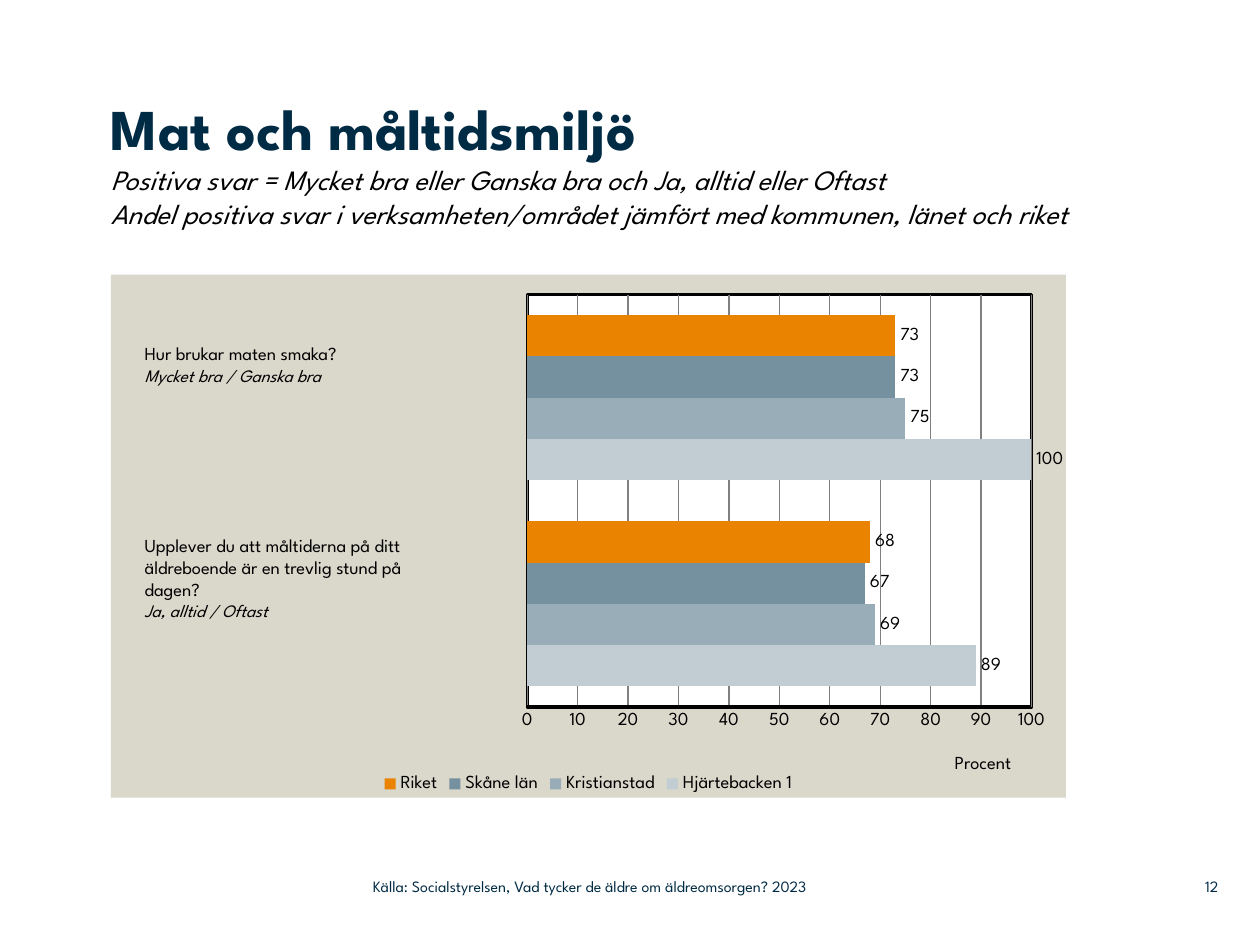
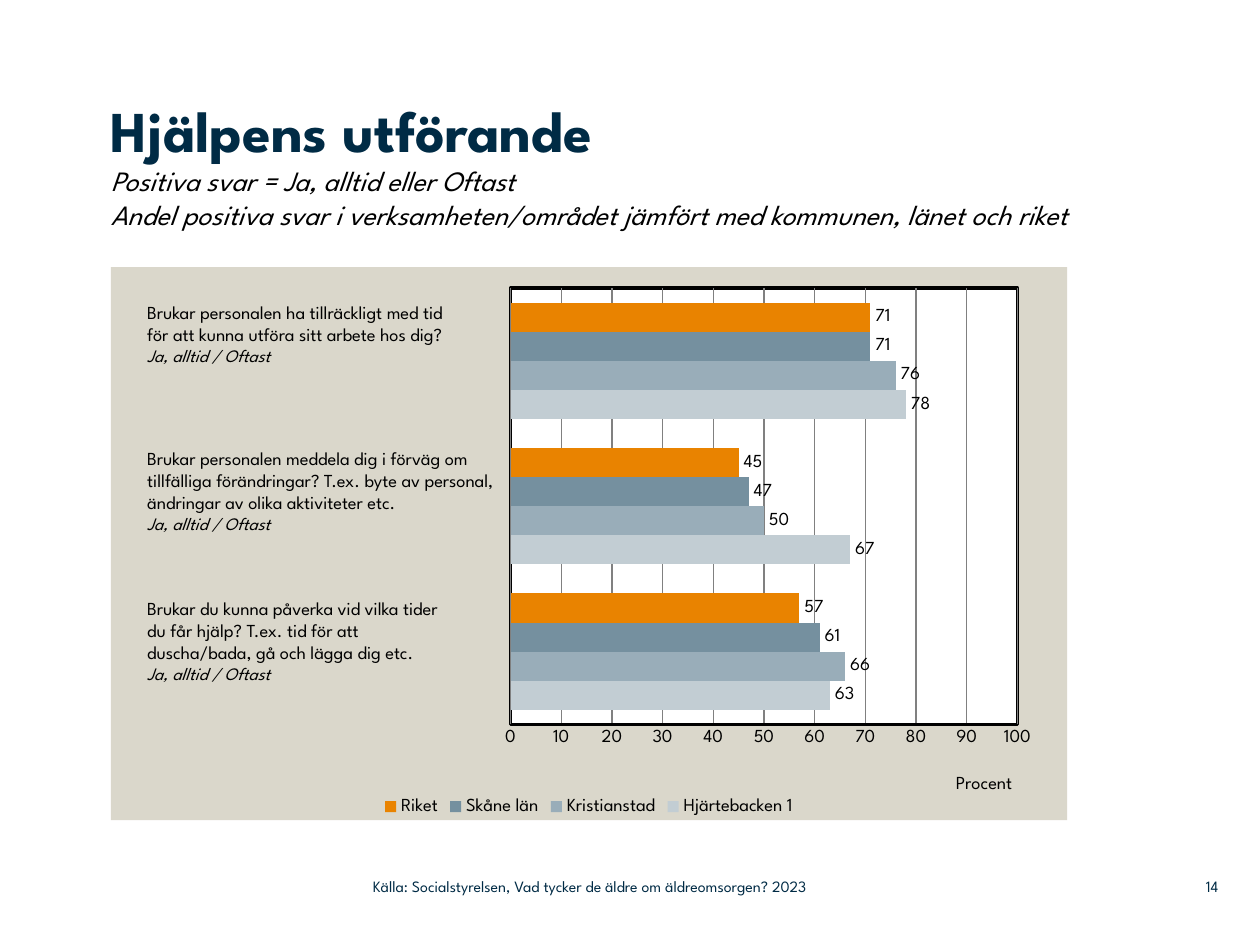
from lxml import etree
from pptx import Presentation
from pptx.chart.data import CategoryChartData
from pptx.dml.color import RGBColor
from pptx.enum.chart import XL_CHART_TYPE as ChartType, XL_LABEL_POSITION as LabelPosition
from pptx.enum.chart import XL_LEGEND_POSITION as LegendPosition, XL_TICK_MARK as TickMark
from pptx.enum.text import MSO_ANCHOR as Anchor, PP_ALIGN as Align
from pptx.oxml import parse_xml
from pptx.oxml.ns import nsdecls, qn
from pptx.util import Inches, Pt

FONT = "League Spartan"
NAVY, BLACK, WHITE, GRID, PANEL = "002B45", "000000", "FFFFFF", "808080", "DAD7CB"
SERIES_COLORS = {
    "Hjärtebacken 1": "C2CDD3",
    "Kristianstad": "99ADB9",
    "Skåne län": "75909F",
    "Riket": "E98300",
}
SOURCE = "Källa: Socialstyrelsen, Vad tycker de äldre om äldreomsorgen? 2023"
COMPARISON = "Andel positiva svar i verksamheten/området jämfört med kommunen, länet och riket"


def rgb(color):
    return RGBColor.from_string(color)


def style_font(font, size=10.5, color=BLACK, bold=False, italic=False):
    font.name, font.size = FONT, Pt(size)
    font.bold, font.italic = bold, italic
    font.color.rgb = rgb(color)


def fill_solid(target, color):
    target.fill.solid()
    target.fill.fore_color.rgb = rgb(color)


def manual_layout(**values):
    """Return a chart layout element whose values are fractions of the chart."""
    layout = parse_xml(f"<c:layout {nsdecls('c')}><c:manualLayout/></c:layout>")
    for tag, value in values.items():
        etree.SubElement(layout[0], qn(f"c:{tag}")).set("val", str(value))
    return layout


def style_plot_area(chart, left, width):
    plot_area = chart._chartSpace.chart.plotArea
    for layout in plot_area.findall(qn("c:layout")):
        plot_area.remove(layout)
    plot_area.insert(0, manual_layout(layoutTarget="inner", xMode="edge", yMode="edge",
                                      x=left, y=0.038, w=width, h=0.789))
    plot_area.append(parse_xml(
        f'<c:spPr {nsdecls("c", "a")}>'
        f'<a:solidFill><a:srgbClr val="{WHITE}"/></a:solidFill>'
        f'<a:ln w="{Pt(2)}"><a:solidFill><a:srgbClr val="{BLACK}"/></a:solidFill></a:ln>'
        '</c:spPr>'))


def fill_chart_background(chart, color):
    properties = parse_xml(
        f'<c:spPr {nsdecls("c", "a")}><a:solidFill><a:srgbClr val="{color}"/></a:solidFill>'
        '<a:ln><a:noFill/></a:ln></c:spPr>')
    chart._chartSpace.chart.addnext(properties)


class SurveyDeck:
    """Holds the shared style and the slide being built."""

    def __init__(self):
        self.presentation = Presentation()
        self.presentation.slide_width = Inches(10)
        self.presentation.slide_height = Inches(7.5)
        self.slide = None

    def new_slide(self, title, positive_answers, number, top=0.74):
        self.slide = self.presentation.slides.add_slide(self.presentation.slide_layouts[6])
        subtitle = dict(size=16, italic=True)
        self.text([(title, dict(size=33, color=NAVY, bold=True)),
                   (positive_answers, subtitle), (COMPARISON, subtitle)],
                  0.88, top, 8.42, 1.4, margin=False)
        footer = dict(size=9, color=NAVY)
        for words, left, width, align in ((SOURCE, 2.96, 4.43, Align.LEFT),
                                          (str(number), 9.2, 0.47, Align.RIGHT)):
            self.text([(words, footer)], left, 6.89, width, 0.29,
                      margin=False, anchor=Anchor.MIDDLE, align=align)

    def text(self, lines, left, top, width, height,
             margin=True, anchor=Anchor.TOP, align=Align.LEFT):
        """Add a text box with one paragraph for each (words, font format) pair."""
        box = self.slide.shapes.add_textbox(Inches(left), Inches(top), Inches(width), Inches(height))
        frame = box.text_frame
        frame.word_wrap = True
        frame.vertical_anchor = anchor
        if not margin:
            frame.margin_left = frame.margin_right = frame.margin_top = frame.margin_bottom = 0
        for index, (words, font_format) in enumerate(lines):
            paragraph = frame.add_paragraph() if index else frame.paragraphs[0]
            paragraph.alignment = align
            run = paragraph.add_run()
            run.text = words
            style_font(run.font, **font_format)

    def question(self, lines, answers, left, top, width, height):
        self.text([(line, {}) for line in lines] + [(answers, dict(size=10, italic=True))],
                  left, top, width, height)

    def bar_chart(self, values, top, width, height, plot_left, plot_width, title_place):
        """Draw one group of bars per question; values run from the lowest group up."""
        data = CategoryChartData()
        data.categories = [str(index + 1) for index in range(len(values[0]))]
        for name, series_values in zip(SERIES_COLORS, values):
            data.add_series(name, series_values)
        chart = self.slide.shapes.add_chart(
            ChartType.BAR_CLUSTERED, Inches(0.88), Inches(top), Inches(width), Inches(height),
            data).chart
        style_font(chart.font)
        chart.has_title = False
        chart.has_legend = True
        chart.legend.position = LegendPosition.BOTTOM
        chart.legend.include_in_layout = False
        style_font(chart.legend.font)
        chart.category_axis.visible = False
        self.percent_axis(chart.value_axis, title_place)

        plot = chart.plots[0]
        plot.gap_width, plot.overlap = 100, 0
        plot.vary_by_categories = False
        for series, color in zip(plot.series, SERIES_COLORS.values()):
            fill_solid(series.format, color)
            labels = series.data_labels
            labels.show_value = True
            labels.position = LabelPosition.OUTSIDE_END
            style_font(labels.font)
        style_plot_area(chart, plot_left, plot_width)
        fill_chart_background(chart, PANEL)

    def percent_axis(self, axis, title_place):
        axis.minimum_scale, axis.maximum_scale, axis.major_unit = 0, 100, 10
        axis.major_tick_mark = axis.minor_tick_mark = TickMark.NONE
        axis.format.line.width = Pt(2)
        axis.format.line.color.rgb = rgb(BLACK)
        axis.major_gridlines.format.line.color.rgb = rgb(GRID)
        axis.major_gridlines.format.line.width = Pt(0.75)
        style_font(axis.tick_labels.font)
        axis.has_title = True
        title = axis.axis_title
        title.text_frame.text = "Procent"
        style_font(title.text_frame.paragraphs[0].runs[0].font)
        x, y = title_place
        element = title._element
        for layout in element.findall(qn("c:layout")):
            element.remove(layout)
        element.find(qn("c:tx")).addnext(manual_layout(xMode="edge", yMode="edge", x=x, y=y))


def main():
    deck = SurveyDeck()

    deck.new_slide("Mat och måltidsmiljö",
                   "Positiva svar = Mycket bra eller Ganska bra och Ja, alltid eller Oftast", 12)
    deck.bar_chart([(89, 100), (69, 75), (67, 73), (68, 73)], 2.18, 7.58, 4.15,
                   plot_left=0.436, plot_width=0.528, title_place=(0.88, 0.91))
    deck.question(["Hur brukar maten smaka?"], "Mycket bra / Ganska bra", 1.05, 2.67, 2.77, 0.63)
    deck.question(["Upplever du att måltiderna på ditt äldreboende är en trevlig stund på",
                   "dagen?"], "Ja, alltid / Oftast", 1.05, 4.19, 2.77, 0.98)

    deck.new_slide("Hjälpens utförande", "Positiva svar = Ja, alltid eller Oftast", 14, top=0.75)
    deck.bar_chart([(63, 67, 78), (66, 50, 76), (61, 47, 71), (57, 45, 71)], 2.12, 7.59, 4.39,
                   plot_left=0.418, plot_width=0.53, title_place=(0.88, 0.91))
    questions = (
        (2.34, 0.81, ["Brukar personalen ha tillräckligt med tid",
                      "för att kunna utföra sitt arbete hos dig?"]),
        (3.5, 0.98, ["Brukar personalen meddela dig i förväg om tillfälliga förändringar? "
                     "T.ex. byte av personal, ändringar av olika aktiviteter etc."]),
        (4.69, 0.81, ["Brukar du kunna påverka vid vilka tider",
                      "du får hjälp? T.ex. tid för att",
                      "duscha/bada, gå och lägga dig etc."]),
    )
    for top, height, lines in questions:
        deck.question(lines, "Ja, alltid / Oftast", 1.07, top, 2.99, height)

    deck.presentation.save("out.pptx")


if __name__ == "__main__":
    main()
